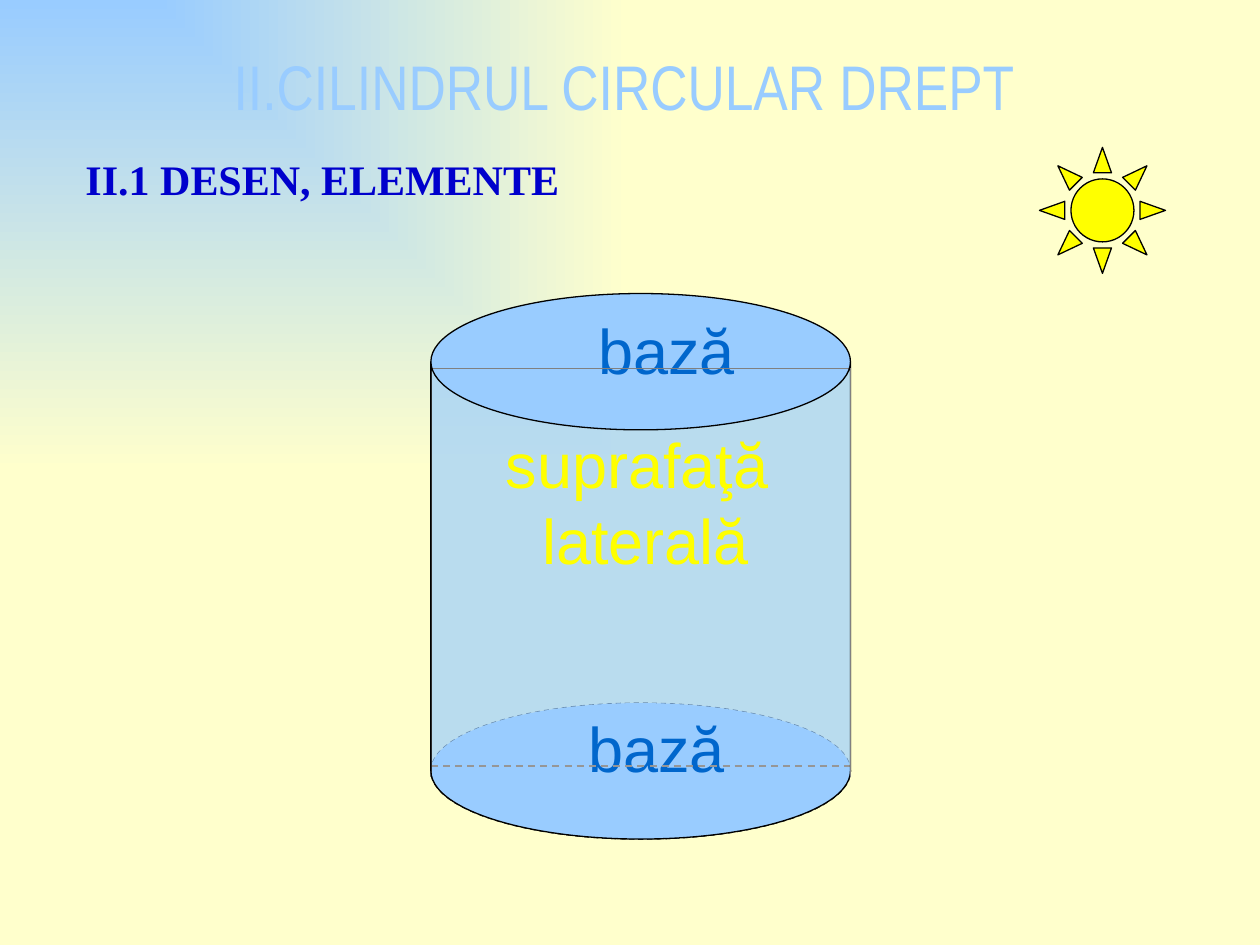
from dataclasses import dataclass
from typing import Optional

from lxml import etree
from pptx import Presentation
from pptx import util as u
from pptx.dml.color import RGBColor
from pptx.enum import dml, shapes, text
from pptx.oxml import parse_xml
from pptx.oxml.ns import nsdecls, qn

COLORS = {
    "sky": "99CCFF", "cream": "FFFFCC", "blue": "0000FF", "navy": "0000CC",
    "label": "0066CC", "yellow": "FFFF00", "black": "000000",
    "gray": "808080", "light gray": "969696",
}
LEFT, WIDTH = 3.42, 3.33
RIGHT = LEFT + WIDTH
TOP, BASE_TOP = 2.33, 5.58
BASE_HEIGHT, CYLINDER_HEIGHT = 1.08, 4.33
RIM = 2.92


@dataclass
class Label:
    content: str
    at: tuple
    color: str
    outline: Optional[str] = "sky"
    font: str = "Arial"
    size: int = 36
    bold: bool = False
    centered: bool = True


@dataclass
class Solid:
    kind: int
    at: tuple
    fill: Optional[str] = None
    line: Optional[str] = None
    dashed: bool = False
    adjustment: Optional[float] = None
    opacity: int = 100


@dataclass
class Edge:
    start: tuple
    end: tuple
    color: str = "gray"
    width: float = 0.75
    dashed: bool = False


def rgb(name: str) -> RGBColor:
    return RGBColor.from_string(COLORS[name])


def inches(values: tuple) -> list:
    return [u.Inches(value) for value in values]


def style_line(line, color: str, width: float, dashed: bool) -> None:
    line.color.rgb = rgb(color)
    line.width = u.Pt(width)
    if dashed:
        line.dash_style = dml.MSO_LINE.DASH


def paint_background(page) -> None:
    """Fade from the top left corner outwards."""
    stops = "".join(
        f'<a:gs pos="{position}"><a:srgbClr val="{COLORS[name]}"/></a:gs>'
        for position, name in ((0, "sky"), (100000, "cream")))
    page._element.cSld.insert(0, parse_xml(
        f'<p:bg {nsdecls("p", "a")}><p:bgPr><a:gradFill rotWithShape="0">'
        f'<a:gsLst>{stops}</a:gsLst><a:path path="rect">'
        '<a:fillToRect r="100000" b="100000"/></a:path></a:gradFill>'
        '<a:effectLst/></p:bgPr></p:bg>'))


def outline_text(span, color: str) -> None:
    span._r.get_or_add_rPr().insert(0, parse_xml(
        f'<a:ln {nsdecls("a")} w="{u.Pt(1.5)}"><a:solidFill>'
        f'<a:srgbClr val="{COLORS[color]}"/></a:solidFill></a:ln>'))


def add_label(page, label: Label) -> None:
    box = page.shapes.add_textbox(*inches(label.at))
    frame = box.text_frame
    frame.text = label.content
    frame.word_wrap = not label.centered
    if label.centered:
        frame.margin_left = frame.margin_right = 0
    for para in frame.paragraphs:
        para.alignment = text.PP_ALIGN.CENTER if label.centered else text.PP_ALIGN.LEFT
        for span in para.runs:
            span.font.name = label.font
            span.font.size = u.Pt(label.size)
            span.font.bold = label.bold
            span.font.color.rgb = rgb(label.color)
            if label.outline:
                outline_text(span, label.outline)


def add_solid(page, solid: Solid) -> None:
    shape = page.shapes.add_shape(solid.kind, *inches(solid.at))
    shape.shadow.inherit = False
    if solid.adjustment is not None:
        shape.adjustments[0] = solid.adjustment
    if solid.fill:
        shape.fill.solid()
        shape.fill.fore_color.rgb = rgb(solid.fill)
        if solid.opacity < 100:
            color = shape._element.spPr.find(qn("a:solidFill"))[0]
            etree.SubElement(color, qn("a:alpha"), val=str(solid.opacity * 1000))
    else:
        shape.fill.background()
    if solid.line:
        style_line(shape.line, solid.line, 0.75, solid.dashed)
    else:
        shape.line.fill.background()


def add_edge(page, edge: Edge) -> None:
    line = page.shapes.add_connector(
        shapes.MSO_CONNECTOR.STRAIGHT, *inches(edge.start + edge.end))
    style_line(line.line, edge.color, edge.width, edge.dashed)
    etree.SubElement(line._element.spPr, qn("a:effectLst"))


OVAL, CAN, SUN = (shapes.MSO_SHAPE.OVAL, shapes.MSO_SHAPE.CAN, shapes.MSO_SHAPE.SUN)
LOWER_BASE = (LEFT, BASE_TOP, WIDTH, BASE_HEIGHT)
UPPER_BASE = (LEFT, TOP, WIDTH, BASE_HEIGHT)
CYLINDER = (LEFT, TOP, WIDTH, CYLINDER_HEIGHT)

ELEMENTS = [
    Label("II.CILINDRUL CIRCULAR DREPT", (1.83, 0.33, 6.25, 0.58), "sky", "blue",
          font="Arial Narrow"),
    Label("II.1 DESEN, ELEMENTE", (0.58, 1.17, 4.25, 0.5), "navy", None,
          font="Times New Roman", size=24, bold=True, centered=False),
    Solid(OVAL, LOWER_BASE, line="black", dashed=True),
    Solid(OVAL, LOWER_BASE, fill="sky"),
    Solid(CAN, CYLINDER, fill="sky", adjustment=0.325, opacity=68),
    Solid(OVAL, UPPER_BASE, fill="sky"),
    Label("bază", (4.66, BASE_TOP, 1.1, 0.5), "label"),
    Label("bază", (4.74, 2.42, 1.1, 0.5), "label"),
    Label("suprafaţă \nlaterală", (3.5, 3.33, 3.25, 2.08), "yellow"),
    Edge((LEFT, RIM), (RIGHT, RIM), width=0.25),
    Edge((LEFT, 6.08), (RIGHT, 6.08), "light gray", 1, dashed=True),
    Edge((LEFT, RIM), (LEFT, 6.17)),
    Solid(CAN, CYLINDER, line="black", adjustment=0.325),
    Edge((RIGHT, RIM), (RIGHT, 6.17)),
    Solid(SUN, (8.25, 1.17, 1, 1), fill="yellow", line="black", adjustment=0.25),
]
DRAW = {Label: add_label, Solid: add_solid, Edge: add_edge}


def main() -> None:
    deck = Presentation()
    deck.slide_width, deck.slide_height = inches((10, 7.5))
    page = deck.slides.add_slide(deck.slide_layouts[6])
    paint_background(page)
    for element in ELEMENTS:
        DRAW[type(element)](page, element)
    deck.save("out.pptx")


if __name__ == "__main__":
    main()
